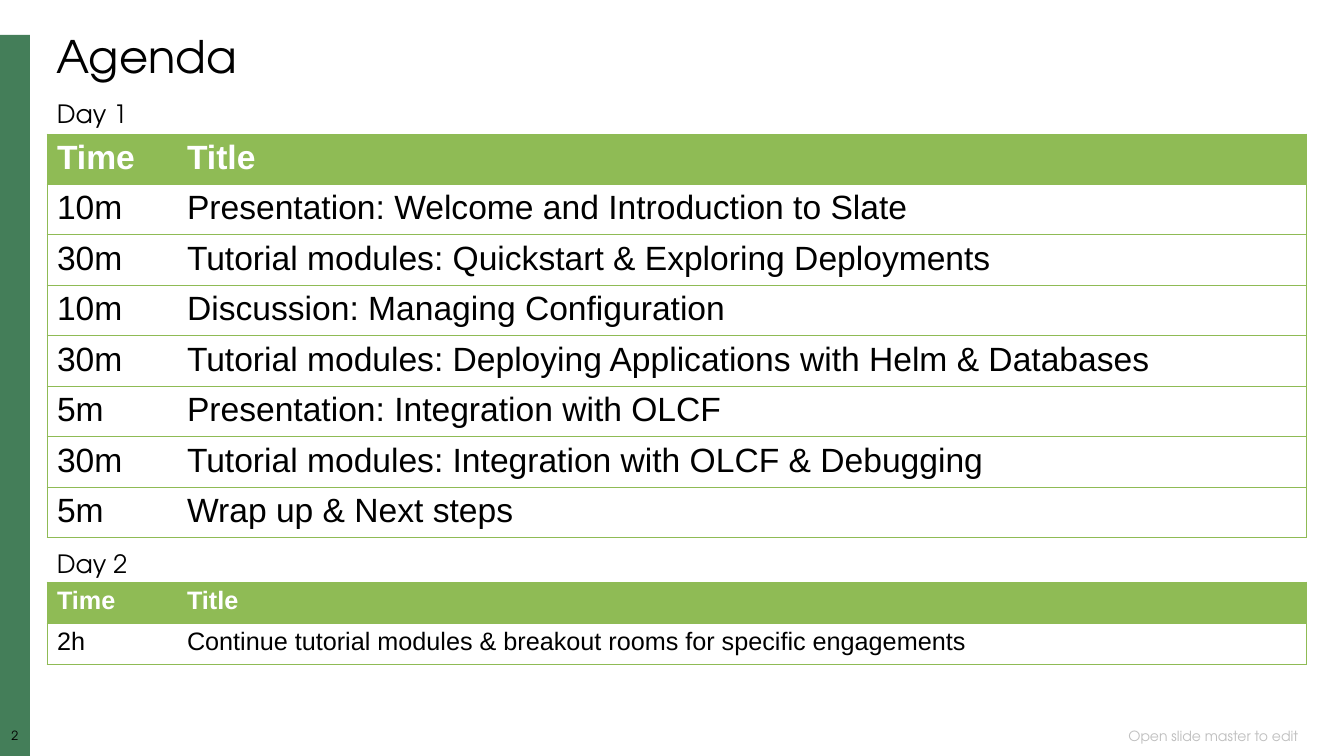
from lxml import etree
from pptx import Presentation
from pptx import util as u
from pptx.dml.color import RGBColor
from pptx.enum import shapes, text
from pptx.oxml.ns import qn

HEADING_FONT = "TeX Gyre Adventor"
BODY_FONT = "Arial"
BLACK, WHITE, GREY = "000000", "FFFFFF", "BFBFBF"
GREEN, DARK_GREEN = "8FBB55", "447E59"

HEADER = ("Time", "Title")
DAY_1 = [
    ("10m", "Presentation: Welcome and Introduction to Slate"),
    ("30m", "Tutorial modules: Quickstart & Exploring Deployments"),
    ("10m", "Discussion: Managing Configuration"),
    ("30m", "Tutorial modules: Deploying Applications with Helm & Databases"),
    ("5m", "Presentation: Integration with OLCF"),
    ("30m", "Tutorial modules: Integration with OLCF & Debugging"),
    ("5m", "Wrap up & Next steps"),
]
DAY_2 = [("2h", "Continue tutorial modules & breakout rooms for specific engagements")]

# label, label top, table top, row height (px), text size (pt), sessions
DAYS = [
    ("Day 1", 97, 134, 47, 24, DAY_1),
    ("Day 2", 547, 582, 41, 18, DAY_2),
]

PAGE_WIDTH, PAGE_HEIGHT = 1344, 756
LEFT = 47
COLUMNS = (130, 1130)
BAR_WIDTH, BAR_TOP = 30, 35


def px(length):
    return u.Emu(round(length * 914400 / 100.8))


def color(value):
    return RGBColor.from_string(value)


def style(para, size, hex_color, font=HEADING_FONT, bold=False):
    for span in para.runs:
        span.font.name = font
        span.font.size = u.Pt(size)
        span.font.bold = bold
        span.font.color.rgb = color(hex_color)


def add_text(page, words, area, size, hex_color=BLACK, align=text.PP_ALIGN.LEFT,
             anchor=text.MSO_ANCHOR.TOP, spacing=0.9, wrap=True, inset=True):
    frame = page.shapes.add_textbox(*map(px, area)).text_frame
    frame.word_wrap = wrap
    frame.vertical_anchor = anchor
    if not inset:
        frame.margin_left = frame.margin_right = 0
        frame.margin_top = frame.margin_bottom = 0
    frame.text = words
    para = frame.paragraphs[0]
    para.alignment = align
    para.line_spacing = spacing
    style(para, size, hex_color)


def set_borders(cell, green_sides):
    """Draw the named sides (of L, R, T, B) in green and hide the others."""
    properties = cell._tc.get_or_add_tcPr()
    for index, side in enumerate("LRTB"):
        line = etree.Element(qn(f"a:ln{side}"), w=str(u.Pt(0.75)))
        if side in green_sides:
            fill = etree.SubElement(line, qn("a:solidFill"))
            etree.SubElement(fill, qn("a:srgbClr"), val=GREEN)
        else:
            etree.SubElement(line, qn("a:noFill"))
        properties.insert(index, line)


def add_agenda(page, top, row_height, size, sessions):
    rows = [HEADER] + sessions
    table = page.shapes.add_table(
        len(rows), len(COLUMNS), px(LEFT), px(top),
        px(sum(COLUMNS)), px(row_height * len(rows))).table
    table.horz_banding = False
    for column, width in zip(table.columns, COLUMNS):
        column.width = px(width)
    for row_index, row in enumerate(rows):
        is_header = row_index == 0
        table.rows[row_index].height = px(row_height)
        for column_index, words in enumerate(row):
            cell = table.cell(row_index, column_index)
            cell.text = words
            style(cell.text_frame.paragraphs[0], size,
                  WHITE if is_header else BLACK, BODY_FONT, is_header)
            if is_header:
                cell.fill.solid()
                cell.fill.fore_color.rgb = color(GREEN)
            else:
                cell.fill.background()
            set_borders(cell, "LTB" if column_index == 0 else "RTB")


def main():
    deck = Presentation()
    deck.slide_width, deck.slide_height = px(PAGE_WIDTH), px(PAGE_HEIGHT)
    page = deck.slides.add_slide(deck.slide_layouts[6])

    bar = page.shapes.add_shape(
        shapes.MSO_SHAPE.RECTANGLE, 0, px(BAR_TOP),
        px(BAR_WIDTH), px(PAGE_HEIGHT - BAR_TOP))
    bar.shadow.inherit = False
    bar.fill.solid()
    bar.fill.fore_color.rgb = color(DARK_GREEN)
    bar.line.fill.background()

    add_text(page, "2", (0, 730, BAR_WIDTH, 17), 9,
             align=text.PP_ALIGN.CENTER, inset=False)
    add_text(page, "Open slide master to edit", (883, 726, 425, 20), 10, GREY,
             text.PP_ALIGN.RIGHT, text.MSO_ANCHOR.MIDDLE, spacing=1.0)
    add_text(page, "Agenda", (LEFT, 30, sum(COLUMNS), 59), 32)

    for label, label_top, table_top, row_height, size, sessions in DAYS:
        add_text(page, label, (LEFT, label_top, 92, 37), 18, wrap=False)
        add_agenda(page, table_top, row_height, size, sessions)

    deck.save("out.pptx")


if __name__ == "__main__":
    main()
